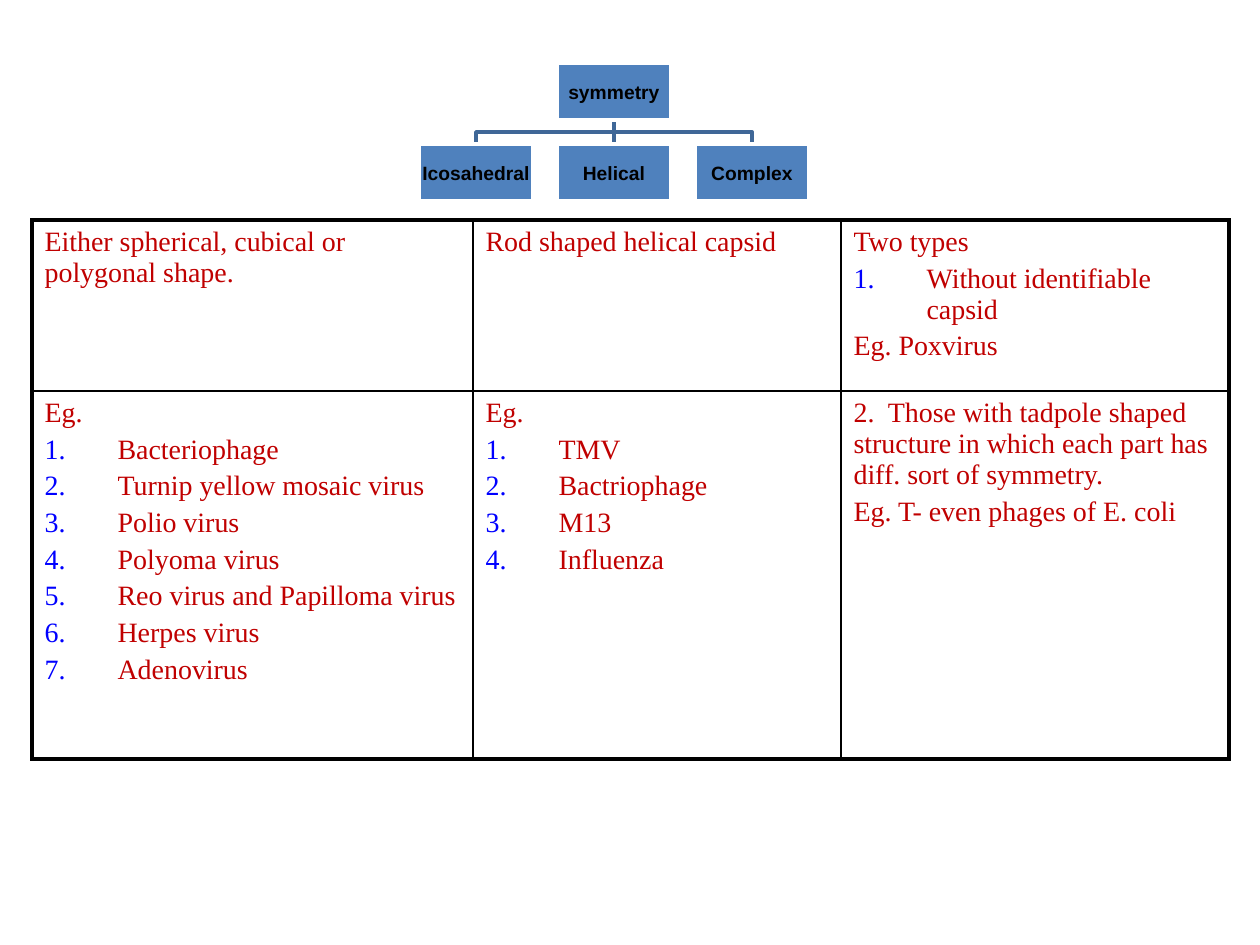
from dataclasses import dataclass

from lxml import etree
from pptx import Presentation
from pptx.dml.color import RGBColor
from pptx.enum.shapes import MSO_CONNECTOR, MSO_SHAPE
from pptx.enum.text import MSO_ANCHOR, PP_ALIGN
from pptx.oxml.ns import qn
from pptx.util import Emu, Pt

RECTANGLE = MSO_SHAPE.RECTANGLE
STRAIGHT = MSO_CONNECTOR.STRAIGHT
MIDDLE = MSO_ANCHOR.MIDDLE
CENTER = PP_ALIGN.CENTER
TOP_SIDE, BOTTOM_SIDE = 0, 2
EMU_PER_INCH, PX_PER_INCH = 914400, 126


@dataclass(frozen=True)
class Theme:
    """Colours, fonts and sizes of the slide."""
    node_fill: str = "4F81BD"
    node_line: str = "FFFFFF"
    node_text: str = "000000"
    branch: str = "3F6797"
    body: str = "C00000"
    number: str = "0000FF"
    border: str = "000000"
    node_font: str = "Arial"
    body_font: str = "Times New Roman"
    node_size: float = 11
    body_size: float = 16
    body_gap: float = 3.2
    line_width: float = 2
    outer_border: float = 2.25
    inner_border: float = 1


THEME = Theme()
NUMBERED, PLAIN = True, False
KINDS = ["Icosahedral", "Helical", "Complex"]
COLUMN_WIDTHS = [441, 368, 388]
ROW_HEIGHTS = [171, 368]
CELLS = [
    [
        [(PLAIN, "Either spherical, cubical or polygonal shape.")],
        [(PLAIN, "Rod shaped helical capsid")],
        [(PLAIN, "Two types"),
         (NUMBERED, "Without identifiable capsid"),
         (PLAIN, "Eg. Poxvirus")],
    ],
    [
        [(PLAIN, "Eg."),
         (NUMBERED, "Bacteriophage"),
         (NUMBERED, "Turnip yellow mosaic virus"),
         (NUMBERED, "Polio virus"),
         (NUMBERED, "Polyoma virus"),
         (NUMBERED, "Reo virus and Papilloma virus"),
         (NUMBERED, "Herpes virus"),
         (NUMBERED, "Adenovirus")],
        [(PLAIN, "Eg."),
         (NUMBERED, "TMV"),
         (NUMBERED, "Bactriophage"),
         (NUMBERED, "M13"),
         (NUMBERED, "Influenza")],
        [(PLAIN, "2.  Those with tadpole shaped structure in which each part "
                 "has diff. sort of symmetry."),
         (PLAIN, "Eg. T- even phages of E. coli")],
    ],
]


def px(length):
    """Turn pixels into EMU."""
    return Emu(round(length * EMU_PER_INCH / PX_PER_INCH))


def add_run(paragraph, text, font, size, color, bold=False):
    """Add one styled run to a paragraph."""
    run = paragraph.add_run()
    run.text = text
    run.font.name = font
    run.font.size = Pt(size)
    run.font.bold = bold
    run.font.color.rgb = RGBColor.from_string(color)


def style_line(line, color):
    """Give a line the diagram's width and a colour."""
    line.color.rgb = RGBColor.from_string(color)
    line.width = Pt(THEME.line_width)


def add_node(slide, label, left, top, width, height):
    """Add one labelled box of the hierarchy."""
    node = slide.shapes.add_shape(RECTANGLE, px(left), px(top), px(width), px(height))
    node.shadow.inherit = False
    node.fill.solid()
    node.fill.fore_color.rgb = RGBColor.from_string(THEME.node_fill)
    style_line(node.line, THEME.node_line)
    frame = node.text_frame
    frame.word_wrap = True
    frame.vertical_anchor = MIDDLE
    frame.margin_left = frame.margin_right = px(1)
    frame.margin_top = frame.margin_bottom = px(1)
    paragraph = frame.paragraphs[0]
    paragraph.alignment = CENTER
    add_run(paragraph, label, THEME.node_font, THEME.node_size, THEME.node_text, True)
    return node


def add_branch(slide, root, child):
    """Join the root's bottom to a child's top, behind the boxes."""
    start_x, start_y = root.left + root.width // 2, root.top + root.height
    end_x, end_y = child.left + child.width // 2, child.top
    if start_x == end_x:
        branch = slide.shapes.add_connector(STRAIGHT, start_x, start_y, end_x, end_y)
        branch.begin_connect(root, BOTTOM_SIDE)
        branch.end_connect(child, TOP_SIDE)
        style_line(branch.line, THEME.branch)
        etree.SubElement(branch._element.spPr, qn("a:effectLst"))
    else:
        bend_y = (start_y + end_y) // 2
        builder = slide.shapes.build_freeform(start_x, start_y)
        builder.add_line_segments(
            [(start_x, bend_y), (end_x, bend_y), (end_x, end_y)], close=False)
        branch = builder.convert_to_shape()
        branch.fill.background()
        branch.shadow.inherit = False
        style_line(branch.line, THEME.branch)
    root._element.addprevious(branch._element)


def add_hierarchy(slide, left, top, width, height):
    """Place the symmetry root above its three evenly spaced kinds."""
    node_width, node_height = 114, 57
    pitch = (width - node_width) // (len(KINDS) - 1)
    root = add_node(slide, "symmetry", left + (width - node_width) // 2, top,
                    node_width, node_height)
    for index, kind in enumerate(KINDS):
        child = add_node(slide, kind, left + index * pitch,
                         top + height - node_height, node_width, node_height)
        add_branch(slide, root, child)


def set_borders(cell, row, column):
    """Draw thick borders on the table's rim and thin ones inside."""
    on_rim = {
        "a:lnL": column == 0,
        "a:lnR": column == len(COLUMN_WIDTHS) - 1,
        "a:lnT": row == 0,
        "a:lnB": row == len(ROW_HEIGHTS) - 1,
    }
    properties = cell._tc.get_or_add_tcPr()
    for position, (tag, rim) in enumerate(on_rim.items()):
        width = THEME.outer_border if rim else THEME.inner_border
        border = etree.Element(qn(tag), w=str(Pt(width)))
        fill = etree.SubElement(border, qn("a:solidFill"))
        etree.SubElement(fill, qn("a:srgbClr"), val=THEME.border)
        properties.insert(position, border)


def fill_cell(cell, lines):
    """Write a cell's plain and numbered paragraphs."""
    frame = cell.text_frame
    for index, (numbered, text) in enumerate(lines):
        paragraph = frame.add_paragraph() if index else frame.paragraphs[0]
        paragraph.space_before = Pt(THEME.body_gap)
        if numbered:
            properties = paragraph._p.get_or_add_pPr()
            properties.set("marL", str(px(73)))
            properties.set("indent", str(-px(73)))
            color = etree.SubElement(properties, qn("a:buClr"))
            etree.SubElement(color, qn("a:srgbClr"), val=THEME.number)
            etree.SubElement(properties, qn("a:buAutoNum"), type="arabicPeriod")
        add_run(paragraph, text, THEME.body_font, THEME.body_size, THEME.body)


def add_comparison(slide, left, top):
    """Place the table that describes each kind of symmetry."""
    table = slide.shapes.add_table(
        len(ROW_HEIGHTS), len(COLUMN_WIDTHS), px(left), px(top),
        px(sum(COLUMN_WIDTHS)), px(sum(ROW_HEIGHTS))).table
    table.first_row = table.horz_banding = False
    for column, width in zip(table.columns, COLUMN_WIDTHS):
        column.width = px(width)
    for row_index, height in enumerate(ROW_HEIGHTS):
        table.rows[row_index].height = px(height)
        for column_index, lines in enumerate(CELLS[row_index]):
            cell = table.cell(row_index, column_index)
            cell.fill.background()
            set_borders(cell, row_index, column_index)
            fill_cell(cell, lines)


def main():
    """Build the slide and save it."""
    deck = Presentation()
    deck.slide_width, deck.slide_height = px(1260), px(945)
    slide = deck.slides.add_slide(deck.slide_layouts[6])
    add_hierarchy(slide, 419, 63, 390, 138)
    add_comparison(slide, 32, 220)
    deck.save("out.pptx")


if __name__ == "__main__":
    main()
